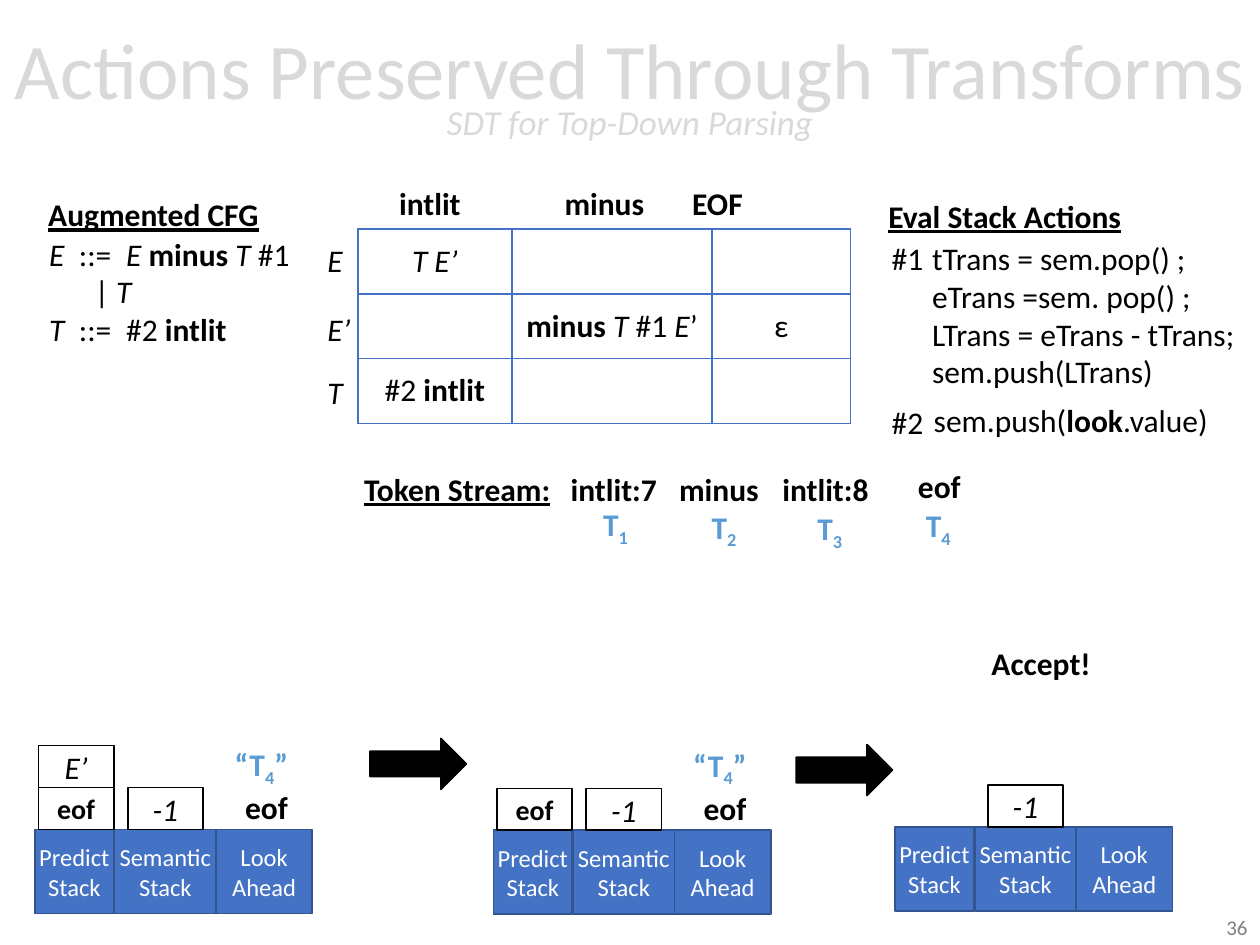
from lxml import etree
from pptx import Presentation
from pptx import util as u
from pptx.dml import color as c
from pptx.enum import shapes, text
from pptx.oxml import ns

Pt = u.Pt
COLORS = {"title": "D9D9D9", "black": "000000", "white": "FFFFFF", "number": "808080",
          "token": "5B9BD5", "stack": "4472C4", "stack_line": "325491"}
ALIGN = {"left": text.PP_ALIGN.LEFT, "center": text.PP_ALIGN.CENTER, "right": text.PP_ALIGN.RIGHT}


def write(frame, content, style="", size=18, color="black", align="left", spacing=None):
    lines = content.split("\n") if isinstance(content, str) else content
    for index, line in enumerate(lines):
        paragraph = frame.add_paragraph() if index else frame.paragraphs[0]
        paragraph.alignment = ALIGN[align]
        paragraph.line_spacing = spacing
        for words, flags in [(line, style)] if isinstance(line, str) else line:
            run = paragraph.add_run()
            run.text = words
            run.font.name, run.font.size = "Calibri", Pt(size)
            run.font.color.rgb = c.RGBColor.from_string(COLORS[color])
            run.font.bold, run.font.italic = "b" in flags, "i" in flags
            run.font.underline = "u" in flags
            if "s" in flags:
                run._r.get_or_add_rPr().set("baseline", "-25000")


def add_box(left, top, width, height, content=None, kind=None, fill="white", line="black", **form):
    bounds = Pt(left), Pt(top), Pt(width), Pt(height)
    if kind is None:
        shape = slide.shapes.add_textbox(*bounds)
        shape.text_frame.word_wrap = form.get("align") in ("center", "right")
    else:
        shape = slide.shapes.add_shape(kind, *bounds)
        shape.shadow.inherit = False
        shape.fill.solid()
        shape.fill.fore_color.rgb = c.RGBColor.from_string(COLORS[fill])
        shape.line.color.rgb = c.RGBColor.from_string(COLORS[line])
        shape.line.width = Pt(1)
        frame = shape.text_frame
        frame.margin_left = frame.margin_right = 0
        frame.vertical_anchor = text.MSO_ANCHOR.MIDDLE
        form["align"] = "center"
    if content:
        write(shape.text_frame, content, **form)


RECTANGLE = shapes.MSO_SHAPE.RECTANGLE
ARROW = shapes.MSO_SHAPE.RIGHT_ARROW

presentation = Presentation()
presentation.slide_width, presentation.slide_height = Pt(720), Pt(540)
slide = presentation.slides.add_slide(presentation.slide_layouts[5])

title = slide.shapes.title
title.left, title.top, title.width, title.height = Pt(0), Pt(1.5), Pt(720), Pt(104.5)
title_frame = title.text_frame
title_frame.margin_left = title_frame.margin_right = 0
title_frame.vertical_anchor = text.MSO_ANCHOR.MIDDLE
title_frame.auto_size = text.MSO_AUTO_SIZE.NONE
write(title_frame, "Actions Preserved Through Transforms", size=45, color="title",
      align="center", spacing=0.7)
title_frame.paragraphs[0].add_line_break()
subtitle = title_frame.paragraphs[0].add_run()
subtitle.text = "SDT for Top-Down Parsing"
subtitle.font.name, subtitle.font.size, subtitle.font.italic = "Calibri", Pt(20), True
subtitle.font.color.rgb = c.RGBColor.from_string(COLORS["title"])
add_box(558, 519, 162, 20, "36", size=12, color="number", align="right")

add_box(20.5, 108, 135.5, 29, "Augmented CFG", style="bu")
add_box(21, 130.5, 153, 73, [
    [("E", "i"), ("\t::=\t", ""), ("E ", "i"), ("minus", "b"), (" T ", "i"), ("#1", "")],
    [("| ", ""), ("T", "i")],
    [("T", "i"), ("\t::=\t#2 ", ""), ("intlit", "b")]])
for index, paragraph in enumerate(slide.shapes[-1].text_frame.paragraphs):
    properties = paragraph._p.get_or_add_pPr()
    if index == 1:
        properties.set("marL", str(Pt(26)))
        continue
    tabs = etree.SubElement(properties, ns.qn("a:tabLst"))
    for position in (17, 44):
        etree.SubElement(tabs, ns.qn("a:tab"), pos=str(Pt(position)), algn="l")

cells = {(0, 0): [[("T E’", "i")]],
         (1, 1): [[("minus ", "b"), ("T", "i"), (" #1 ", ""), ("E", "i"), ("’", "")]],
         (1, 2): "ε",
         (2, 0): [[("#2 ", ""), ("intlit", "b")]]}
parse_table = slide.shapes.add_table(3, 3, Pt(204.5), Pt(131), Pt(281.5), Pt(111)).table
parse_table.first_row = parse_table.horz_banding = False
for column, width in zip(parse_table.columns, (88, 114.5, 79)):
    column.width = Pt(width)
for row_index, row in enumerate(parse_table.rows):
    row.height = Pt(37)
    for column_index, cell in enumerate(row.cells):
        cell.margin_left = cell.margin_right = 0
        cell.vertical_anchor = text.MSO_ANCHOR.MIDDLE
        write(cell.text_frame, cells.get((row_index, column_index), ""), align="center")
        properties = cell._tc.get_or_add_tcPr()
        for side in "LRTB":
            border = etree.SubElement(properties, ns.qn(f"a:ln{side}"), w=str(Pt(1)))
            border_fill = etree.SubElement(border, ns.qn("a:solidFill"))
            etree.SubElement(border_fill, ns.qn("a:srgbClr"), val=COLORS["stack"])
        cell.fill.solid()
        cell.fill.fore_color.rgb = c.RGBColor.from_string(COLORS["white"])

for left, width, heading in ((221, 50, "intlit"), (315.5, 60, "minus"), (388.5, 44, "EOF")):
    add_box(left, 101.5, width, 29, heading, style="b")
for top, symbol in ((134, "E"), (173.5, "E’"), (209.5, "T")):
    add_box(180, top, 36, 29, symbol, style="i")

add_box(500.5, 109, 149, 29, "Eval Stack Actions", style="bu")
add_box(502.5, 133, 33, 29, "#1")
add_box(502.5, 226.5, 33, 29, "#2")
add_box(525.5, 133, 189.5, 94.5,
        "tTrans = sem.pop() ;\neTrans =sem. pop() ;\nLTrans = eTrans - tTrans;\nsem.push(LTrans)")
add_box(526.5, 225.5, 177, 29, [[("sem.push(", ""), ("look", "b"), (".value)", "")]])

add_box(201, 265, 121.5, 29, "Token Stream:", style="bu")
tokens = [("intlit:7", 319, 265, 337.5, 285), ("minus", 381, 265, 399.5, 286.5),
          ("intlit:8", 440, 265, 460, 287.5), ("eof", 517.5, 263.5, 522, 285.5)]
for number, (token, left, top, mark_left, mark_top) in enumerate(tokens, 1):
    add_box(left, top, 64, 29, token, style="b")
    add_box(mark_left, mark_top, 29.5, 29, [[("T", "b"), (str(number), "bs")]], color="token")

stack_columns = [("Predict\nStack", 0, 45), ("Semantic\nStack", 45.5, 58), ("Look\nAhead", 103.5, 55)]
machines = [(20, 474, ["eof", "E’"], True), (282, 474.5, ["eof"], True),
            (511.5, 472.5, [], False)]
for left, top, predicted, has_lookahead in machines:
    for name, offset, width in stack_columns:
        add_box(left + offset, top, width, 48, name, kind=RECTANGLE, fill="stack",
                line="stack_line", size=14, color="white")
    for level, symbol in enumerate(predicted, 1):
        add_box(left + 2, top - 24 * level, 43, 24, symbol, kind=RECTANGLE,
                style="b" if symbol == "eof" else "i", size=16 if symbol == "eof" else 18)
    add_box(left + 53, top - 24, 43, 24, "-1", kind=RECTANGLE, style="i")
    if has_lookahead:
        add_box(left + 99.5, top - 27, 65.5, 29, "eof", style="b", align="center")
        add_box(left + 107, top - 52, 46, 29, [[("“T", "b"), ("4", "bs"), ("”", "b")]],
                color="token")

for left, top in ((211.5, 422), (455, 425.5)):
    add_box(left, top, 55, 29, kind=ARROW, fill="black")
add_box(559.5, 364.5, 72, 29, "Accept!", style="b")

presentation.save("out.pptx")
